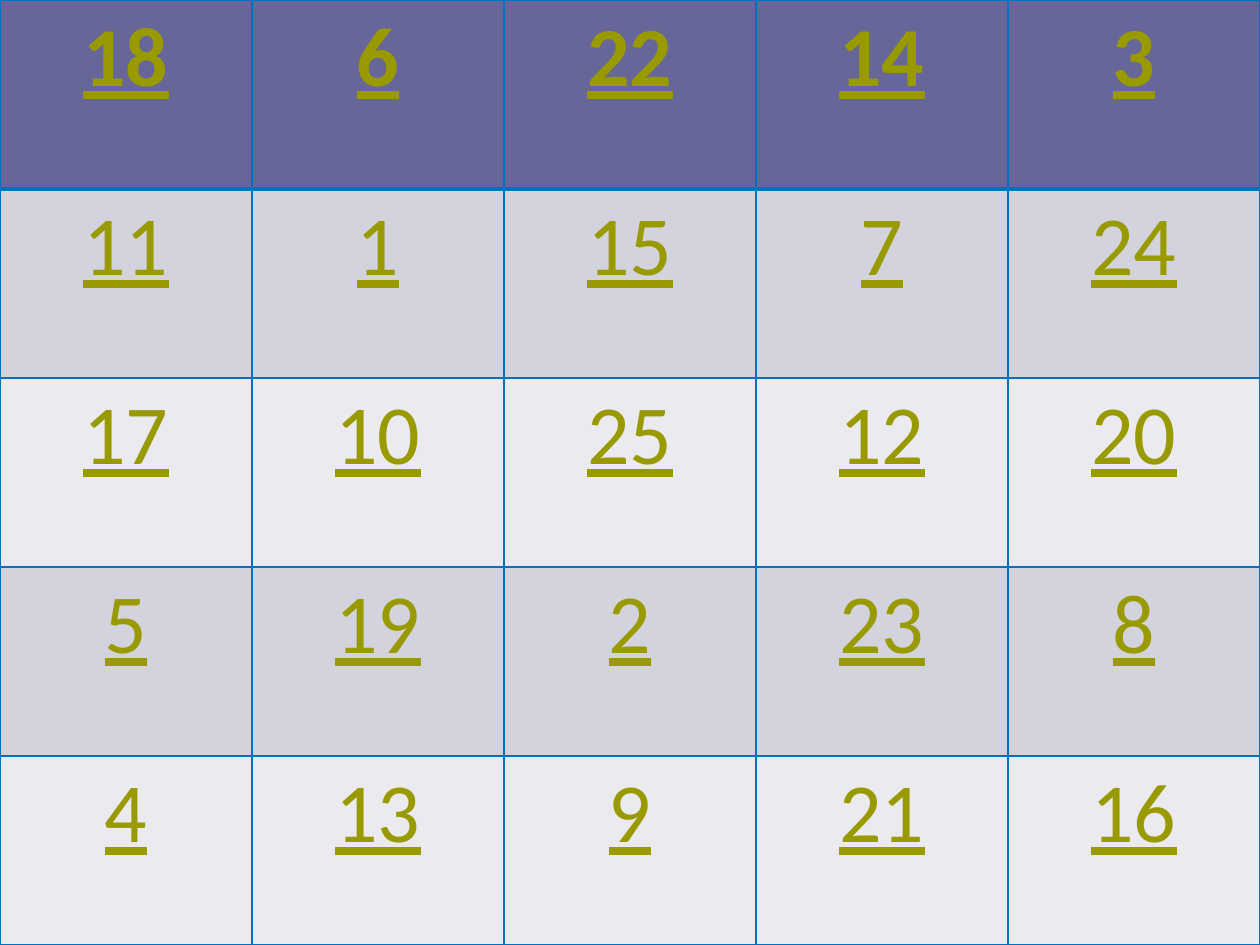
from dataclasses import dataclass

from lxml import etree
from pptx import Presentation
from pptx.dml.color import RGBColor
from pptx.enum.text import PP_ALIGN
from pptx.oxml.ns import qn
from pptx.util import Inches, Pt

CENTER = PP_ALIGN.CENTER

# Content: the first row is the header
GRID = [
    [18, 6, 22, 14, 3],
    [11, 1, 15, 7, 24],
    [17, 10, 25, 12, 20],
    [5, 19, 2, 23, 8],
    [4, 13, 9, 21, 16],
]


@dataclass(frozen=True)
class Theme:
    back: str = "0070C0"
    line: str = "0070C0"
    head: str = "666699"
    bands: tuple = ("D3D3DE", "EAEAEF")
    text: str = "999900"
    face: str = "Calibri"
    size: int = 48
    thin: int = 1
    thick: int = 3


THEME = Theme()


def paint(fill, color):
    fill.solid()
    fill.fore_color.rgb = RGBColor.from_string(color)


def add_edges(cell, widths):
    """Draw cell borders; they must come before the fill in the cell's XML."""
    props = cell._tc.get_or_add_tcPr()
    for spot, (side, width) in enumerate(widths.items()):
        line = etree.Element(qn(f"a:ln{side}"), w=str(Pt(width)))
        solid = etree.SubElement(line, qn("a:solidFill"))
        etree.SubElement(solid, qn("a:srgbClr"), val=THEME.line)
        props.insert(spot, line)


def write(cell, value, bold):
    cell.text = str(value)
    para = cell.text_frame.paragraphs[0]
    para.alignment = CENTER
    font = para.runs[0].font
    style = {"name": THEME.face, "size": Pt(THEME.size),
             "bold": bold, "underline": True}
    for key, val in style.items():
        setattr(font, key, val)
    font.color.rgb = RGBColor.from_string(THEME.text)


def main():
    deck = Presentation()
    deck.slide_width, deck.slide_height = Inches(10), Inches(7.5)
    slide = deck.slides.add_slide(deck.slide_layouts[6])
    paint(slide.background.fill, THEME.back)

    # Number grid fills the whole slide in equal cells
    table = slide.shapes.add_table(
        len(GRID), len(GRID[0]), 0, 0, deck.slide_width, deck.slide_height
    ).table

    for r, row in enumerate(GRID):
        head = r == 0
        color = THEME.head if head else THEME.bands[(r - 1) % 2]
        edges = {
            "L": THEME.thin,
            "R": THEME.thin,
            "T": THEME.thick if r == 1 else THEME.thin,
            "B": THEME.thick if head else THEME.thin,
        }
        for c, value in enumerate(row):
            cell = table.cell(r, c)
            write(cell, value, head)
            paint(cell.fill, color)
            add_edges(cell, edges)

    deck.save("out.pptx")


if __name__ == "__main__":
    main()
